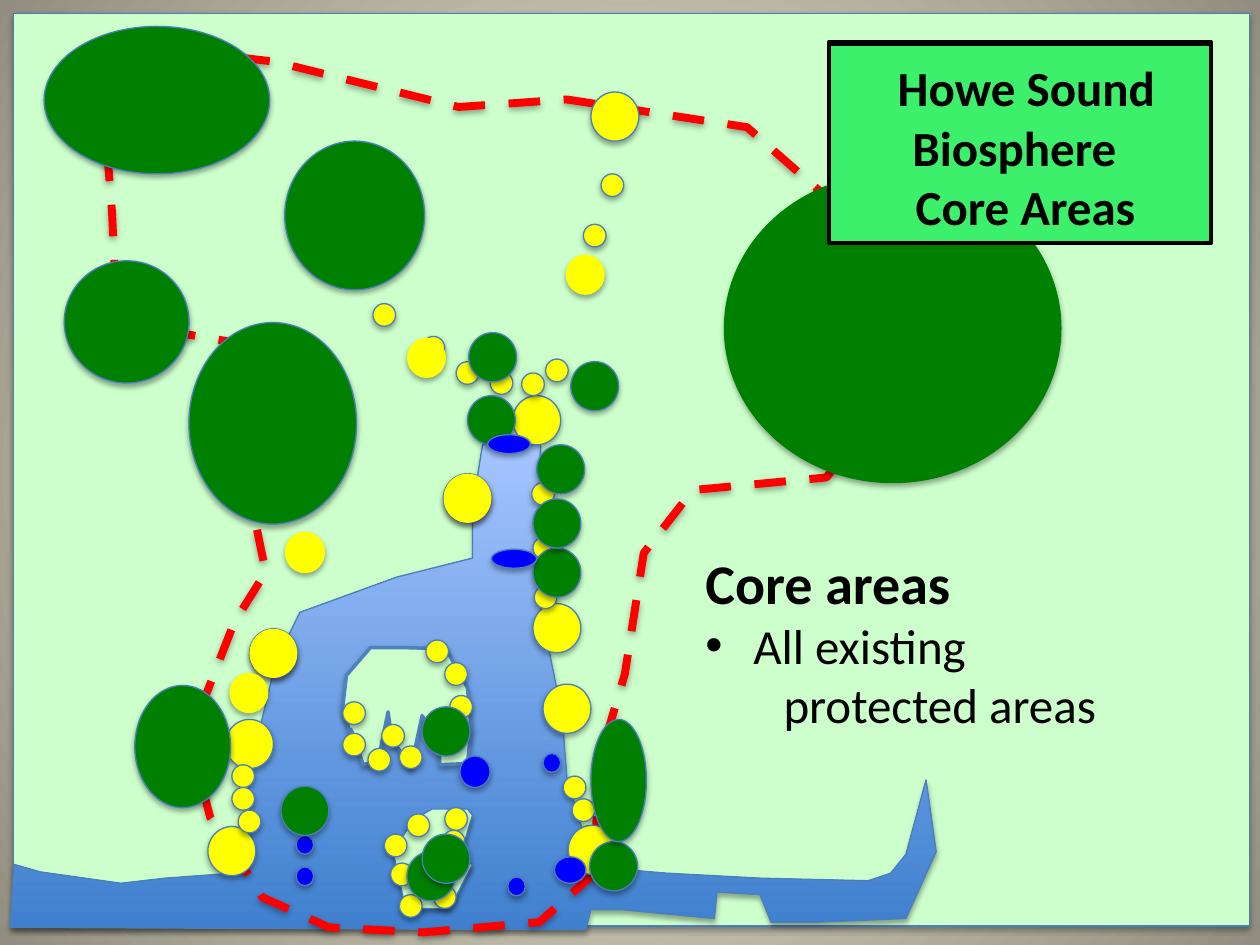
import pptx
import pptx.util
import pptx.dml.color
import pptx.enum.dml
import pptx.enum.shapes
import pptx.enum.text
import pptx.oxml
import lxml.etree

Inches, Pt = pptx.util.Inches, pptx.util.Pt
RGB = pptx.dml.color.RGBColor.from_string
KIND = pptx.enum.shapes.MSO_SHAPE
TEXT = pptx.enum.text
NS = 'xmlns:a="http://schemas.openxmlformats.org/drawingml/2006/main"'

theme = {
    "land": "CCFFCC", "edge": "4B7EBC", "shore": "4F81BD", "deep": "3F80CE",
    "pale": "A4C4FF", "bound": "FF0000", "yellow": "FFFF00", "green": "008000",
    "blue": "0000FF", "label": "3CF06B", "under": "77933C", "ink": "000000",
    "glow": "FCF7DD", "rim": "918E81",
    "font": "Calibri", "head": 32, "body": 28,
}


def style(shape, fill, edge="edge", width=0.75, shade=True):
    """Fill, outline and soft shadow of one shape."""
    if fill:
        shape.fill.solid()
        shape.fill.fore_color.rgb = RGB(theme[fill])
    else:
        shape.fill.background()
    if edge:
        shape.line.color.rgb = RGB(theme[edge])
        shape.line.width = Pt(width)
    else:
        shape.line.fill.background()
    shape.shadow.inherit = False
    if shade:
        xml = (f'<a:outerShdw {NS} blurRad="39370" dist="22860" dir="5400000" rotWithShape="0">'
               f'<a:srgbClr val="{theme["ink"]}"><a:alpha val="35000"/></a:srgbClr></a:outerShdw>')
        shape._element.spPr.find(pptx.oxml.ns.qn("a:effectLst")).append(pptx.oxml.parse_xml(xml))
    return shape


def write(par, text, size, bold):
    """One run of text in a paragraph."""
    run = par.add_run()
    run.text = text
    look = {"name": theme["font"], "size": Pt(theme[size]), "bold": bold}
    for key, val in look.items():
        setattr(run.font, key, val)
    run.font.color.rgb = RGB(theme["ink"])


deck = pptx.Presentation()
deck.slide_width, deck.slide_height = Inches(10), Inches(7.5)
slide = deck.slides.add_slide(deck.slide_layouts[6])
shapes = slide.shapes

# Background glow
slide.background.fill.solid()
props = slide.background._cSld.bg.bgPr
props.replace(props[0], pptx.oxml.parse_xml(
    f'<a:gradFill {NS} rotWithShape="1"><a:gsLst>'
    f'<a:gs pos="0"><a:srgbClr val="{theme["glow"]}"/></a:gs>'
    f'<a:gs pos="100000"><a:srgbClr val="{theme["rim"]}"/></a:gs></a:gsLst>'
    '<a:path path="circle"><a:fillToRect l="50000" t="50000" r="50000" b="50000"/></a:path>'
    '</a:gradFill>'))

# Land
box = [Inches(n) for n in (0.11, 0.11, 9.81, 7.24)]
style(shapes.add_shape(KIND.RECTANGLE, *box), "land")

# Outlines: points, closed, fill, edge, line width
water = [
    (0.32, 6.92), (0.96, 7.01), (1.31, 6.97), (1.85, 6.93), (2, 6.88), (2, 6.75), (1.97, 6.17),
    (2.19, 5.25), (2.38, 4.86), (3.15, 4.58), (3.75, 4.43), (3.75, 4.03), (3.83, 3.53),
    (4.29, 3.53), (4.28, 4.03), (4.28, 4.78), (4.46, 5.67), (4.5, 6.18), (4.71, 6.88),
    (5.29, 6.93), (6.04, 6.97), (6.89, 6.99), (7.07, 6.93), (7.19, 6.78), (7.35, 6.19),
    (7.43, 6.76), (7.19, 7.29), (6.47, 7.32), (6.12, 7.32), (6.03, 7.1), (5.69, 7.08),
    (5.67, 7.29), (4.94, 7.22), (4.69, 7.22), (4.65, 7.38), (0.08, 7.36), (0.11, 6.86)]
north = [
    (2.81, 5.93), (2.72, 5.61), (2.75, 5.36), (2.94, 5.14), (3.21, 5.14), (3.54, 5.15),
    (3.71, 5.46), (3.74, 5.78), (3.71, 6.06), (3.49, 6.07), (3.49, 5.89), (3.35, 5.68),
    (3.26, 6.1), (3.11, 5.86), (3.08, 5.65), (3, 6.04), (2.88, 6.07), (2.83, 5.89), (2.78, 5.78)]
south = [
    (3.71, 6.42), (3.43, 6.42), (3.28, 6.51), (3.12, 6.76), (3.22, 7.21), (3.57, 7.21),
    (3.75, 6.86), (3.6, 6.81), (3.69, 6.67), (3.75, 6.47)]
bound = [
    (1.92, 6.86), (1.67, 6.49), (1.54, 6), (1.61, 5.58), (1.86, 4.94), (2.11, 4.54), (2, 4.01),
    (2.44, 3.57), (2.54, 3.17), (1.99, 2.74), (0.93, 2.56), (0.89, 1.69), (0.81, 0.68),
    (0.82, 0.33), (2.18, 0.49), (3.64, 0.85), (4.5, 0.79), (5.93, 1.01), (6.92, 1.88),
    (7.17, 2.99), (6.56, 3.79), (5.5, 3.89), (5.11, 4.39), (4.96, 5.35), (4.75, 6.06),
    (4.72, 6.93), (4.28, 7.32), (3.36, 7.4), (2.61, 7.36), (2.08, 7.12)]
drawn = []
for points, closed, fill, edge, width in [
        (water, True, "deep", "edge", 0.75), (north, False, "land", "shore", 2),
        (south, True, "land", "edge", 0.75), (bound, True, None, "bound", 4.5)]:
    spots = [(Inches(x), Inches(y)) for x, y in points]
    pen = shapes.build_freeform(*spots[0])
    pen.add_line_segments(spots[1:], close=closed)
    drawn.append(style(pen.convert_to_shape(), fill, edge, width))
drawn[-1].line.dash_style = pptx.enum.dml.MSO_LINE.DASH
sea = drawn[0].fill
sea.gradient()
sea.gradient_angle = 90
for stop, name in zip(sea.gradient_stops, ("deep", "pale")):
    stop.color.rgb = RGB(theme[name])

# Circles that share a size: fill, edge, width, height, places
big, dot, drop = (0.38, 0.39), (0.18, 0.18), (0.14, 0.15)
groups = [
    ("yellow", "edge", big, [
        (4.51, 6.55), (4.07, 3.14), (4.31, 5.43), (1.79, 5.71), (1.65, 6.56), (4.69, 0.73),
        (4.23, 4.79), (3.52, 3.76), (1.98, 4.99)]),
    ("yellow", None, (0.32, 0.33), [(2.26, 4.22)]),
    ("yellow", "edge", dot, [
        (4.33, 2.85), (3.23, 6.46), (3.05, 6.62), (3.1, 6.85), (3.17, 7.1), (3.44, 7.03),
        (3.53, 6.41), (3.51, 6.59), (4.47, 6.16), (4.54, 6.34), (4.14, 2.96), (3.38, 5.08),
        (2.72, 5.57), (2.72, 5.82), (2.92, 5.94), (3.53, 5.26), (3.57, 5.52), (3.03, 5.75),
        (3.17, 5.92), (1.84, 6.07), (1.84, 6.25), (1.89, 6.43), (4.63, 1.78), (4.77, 1.38),
        (3.62, 2.87), (3.35, 2.67), (2.96, 2.41), (3.89, 2.95), (4.22, 3.83), (4.23, 4.26),
        (4.24, 4.65)]),
    ("yellow", None, big, [(3.52, 3.76), (1.98, 4.99)]),
    ("yellow", None, (0.31, 0.32), [(3.23, 2.68), (4.49, 2.02), (1.82, 5.34)]),
    ("green", "edge", big, [
        (4.68, 6.68), (3.23, 6.76), (3.35, 5.61), (3.71, 3.14), (4.26, 3.53), (4.23, 4.35),
        (4.23, 3.96), (3.72, 2.64), (3.35, 6.62)]),
    ("blue", "edge", drop, [(4.31, 5.98), (4.03, 6.96), (2.35, 6.63), (2.35, 6.88)]),
    ("blue", "edge", (0.36, 0.15), [(3.9, 4.36)]),
    ("blue", "edge", (0.25, 0.21), [(4.4, 6.8)]),
    ("blue", "edge", (0.24, 0.25), [(3.65, 6)]),
    ("blue", "edge", (0.34, 0.15), [(3.87, 3.45)]),
    ("green", "green", (2.67, 2.45), [(5.75, 1.38)]),
    ("green", "edge", (1.33, 1.6), [(1.5, 2.56)]),
    ("green", "edge", (1.79, 1.17), [(0.35, 0.21)]),
    ("green", "edge", (1.11, 1.18), [(2.26, 1.12)]),
    ("green", "edge", (0.99, 0.97), [(0.51, 2.07)]),
    ("green", "edge", (0.44, 0.97), [(4.69, 5.71)]),
    ("green", "edge", (0.76, 0.97), [(1.07, 5.44)]),
    ("green", "edge", big, [(2.23, 6.24), (4.53, 2.87)]),
]
for fill, edge, size, places in groups:
    for place in places:
        box = [Inches(n) for n in place + size]
        style(shapes.add_shape(KIND.OVAL, *box), fill, edge)

# Key to the core areas
box = [Inches(n) for n in (5.5, 4.3, 3.35, 1.58)]
frame = shapes.add_textbox(*box).text_frame
look = {"word_wrap": False, "auto_size": TEXT.MSO_AUTO_SIZE.SHAPE_TO_FIT_TEXT}
for key, val in look.items():
    setattr(frame, key, val)
rows = [("Core areas", "head", True, 0, 0), ("All existing", "body", False, 0.38, -0.38),
        ("protected areas", "body", False, 0.62, 0)]
for spot, (text, size, bold, left, hang) in enumerate(rows):
    par = frame.add_paragraph() if spot else frame.paragraphs[0]
    props = par._p.get_or_add_pPr()
    props.set("marL", str(Inches(left)))
    props.set("indent", str(Inches(hang)))
    if hang:
        lxml.etree.SubElement(props, pptx.oxml.ns.qn("a:buFont")).set("typeface", "Arial")
        lxml.etree.SubElement(props, pptx.oxml.ns.qn("a:buChar")).set("char", "•")
    write(par, text, size, bold)

# Title label on its backing plate
for top, fill in [(0.33, "under"), (0.35, "label")]:
    box = [Inches(n) for n in (6.58, top, 3.03, 1.58)]
    label = style(shapes.add_shape(KIND.RECTANGLE, *box), fill, "ink", 2.25, False)
frame = label.text_frame
look = {"word_wrap": True, "vertical_anchor": TEXT.MSO_ANCHOR.TOP,
        "auto_size": TEXT.MSO_AUTO_SIZE.SHAPE_TO_FIT_TEXT}
for key, val in look.items():
    setattr(frame, key, val)
rows = [[(" ", "head"), ("Howe Sound", "body")], [("Biosphere ", "body")],
        [(" Core Areas", "body")]]
for spot, runs in enumerate(rows):
    par = frame.add_paragraph() if spot else frame.paragraphs[0]
    par.alignment = TEXT.PP_ALIGN.CENTER
    for text, size in runs:
        write(par, text, size, True)

deck.save("out.pptx")
